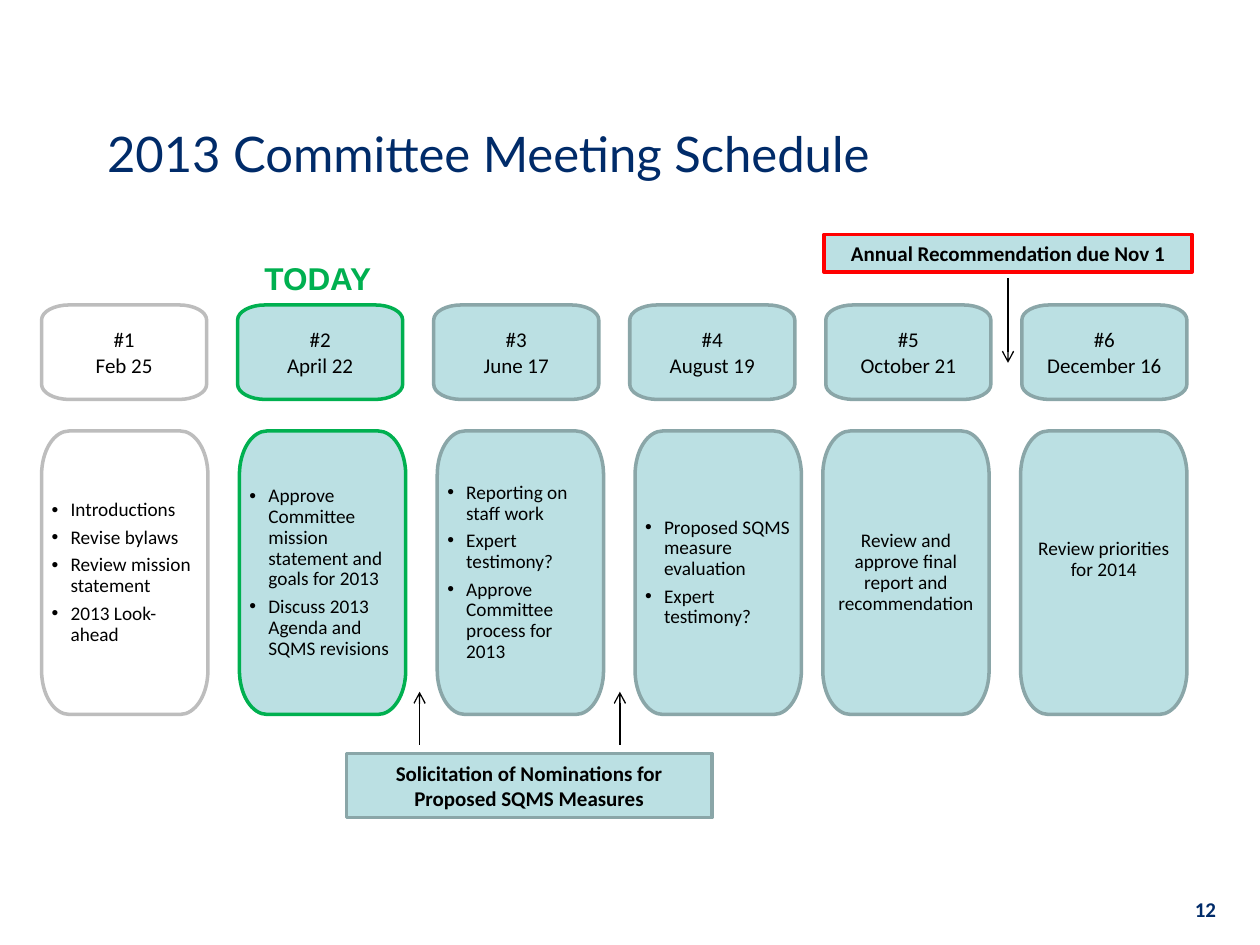
from math import cos, pi, sin, tan

from lxml.etree import SubElement
from pptx import Presentation
from pptx.dml.color import RGBColor
from pptx.enum.shapes import MSO_CONNECTOR, MSO_SHAPE
from pptx.enum.text import MSO_ANCHOR, MSO_AUTO_SIZE, PP_ALIGN
from pptx.oxml.ns import qn
from pptx.util import Inches, Pt

NAVY = RGBColor(0x00, 0x2B, 0x69)
BLACK = RGBColor(0x00, 0x00, 0x00)
WHITE = RGBColor(0xFF, 0xFF, 0xFF)
AQUA = RGBColor(0xBB, 0xE0, 0xE3)
TEAL = RGBColor(0x8A, 0xA6, 0xA8)
GREY = RGBColor(0xBD, 0xBD, 0xBD)
GREEN = RGBColor(0x00, 0xB0, 0x50)
RED = RGBColor(0xFF, 0x00, 0x00)

# Font formats
TITLE = {"name": "Lato", "size": Pt(28)}
DATE = {"name": "Calibri", "size": Pt(12)}
TASK = {"name": "Calibri", "size": Pt(11)}
NOTE = {"name": "Calibri", "size": Pt(12), "bold": True}
MARKER = {"name": "Arial", "size": Pt(18), "bold": True}

# Column grid, in inches
LEFT, RIGHT = 0.33, 9.42
DATE_WIDTH, TASK_WIDTH = 1.31, 1.32
DATE_PITCH = (RIGHT - LEFT - DATE_WIDTH) / 5
TASK_PITCH = 1.57
FINAL_SHIFT = 0.08  # the last two task columns sit closer in
CORNER_WIDTH = 0.22

# Number, date, tasks, fill, outline
MEETINGS = [
    ("#1", "Feb 25", ["Introductions", "Revise bylaws", "Review mission statement",
                      "2013 Look-ahead"], WHITE, GREY),
    ("#2", "April 22", ["Approve Committee mission statement and goals for 2013",
                        "Discuss 2013 Agenda and SQMS revisions"], AQUA, GREEN),
    ("#3", "June 17", ["Reporting on staff work", "Expert testimony?",
                       "Approve Committee process for 2013"], AQUA, TEAL),
    ("#4", "August 19", ["Proposed SQMS measure evaluation", "Expert testimony?"], AQUA, TEAL),
    ("#5", "October 21", ["Review and approve final report and recommendation"], AQUA, TEAL),
    ("#6", "December 16", ["Review priorities for 2014"], AQUA, TEAL),
]


def apply_format(font, font_format, color):
    for attribute, value in font_format.items():
        setattr(font, attribute, value)
    font.color.rgb = color


def write_lines(frame, lines, font_format, color, align=PP_ALIGN.CENTER):
    for index, line in enumerate(lines):
        paragraph = frame.paragraphs[0] if index == 0 else frame.add_paragraph()
        paragraph.alignment = align
        run = paragraph.add_run()
        run.text = line
        apply_format(run.font, font_format, color)


def paint(shape, fill, outline):
    shape.shadow.inherit = False
    shape.fill.solid()
    shape.fill.fore_color.rgb = fill
    shape.line.color.rgb = outline
    shape.line.width = Pt(2)


def trace_card(slide, box, corner_height):
    """Outline clockwise from the left side, two curves to each elliptical corner."""
    left, top, width, height = box
    right, bottom = left + width - CORNER_WIDTH, top + height - corner_height
    left, top = left + CORNER_WIDTH, top + corner_height
    centers = [(left, top), (right, top), (right, bottom), (left, bottom)]
    reach = 4 / 3 * tan(pi / 16)
    points, handles = [], []
    for quarter, (x, y) in enumerate(centers):
        for step in range(3):
            angle = pi + quarter * pi / 2 + step * pi / 4
            points.append((Inches(x + CORNER_WIDTH * cos(angle)),
                           Inches(y + corner_height * sin(angle))))
            handles.append((Inches(-reach * CORNER_WIDTH * sin(angle)),
                            Inches(reach * corner_height * cos(angle))))
    builder = slide.shapes.build_freeform(*points[0])
    builder.add_line_segments(points[1:], close=True)
    card = builder.convert_to_shape()

    # Bend the corner segments; every third one is a straight side
    segments = list(card._element.iter(qn("a:lnTo")))
    for index, segment in enumerate(segments[:len(points) - 1], start=1):
        if index % 3 == 0:
            continue
        end_point = segment[0]
        for corner, sign in ((index - 1, 1), (index, -1)):
            control = SubElement(segment, qn("a:pt"))
            control.set("x", str(points[corner][0] + sign * handles[corner][0] - card.left))
            control.set("y", str(points[corner][1] + sign * handles[corner][1] - card.top))
        segment.append(end_point)
        segment.tag = qn("a:cubicBezTo")
    return card


def add_card(slide, box, corner_height, fill, outline):
    card = trace_card(slide, box, corner_height)
    paint(card, fill, outline)
    frame = card.text_frame
    frame.word_wrap = True
    frame.vertical_anchor = MSO_ANCHOR.MIDDLE
    for side in ("left", "top", "right", "bottom"):
        setattr(frame, f"margin_{side}", Inches(0.08))
    return frame


def add_bullet(paragraph):
    properties = paragraph._p.get_or_add_pPr()
    properties.set("marL", str(Inches(0.15)))
    properties.set("indent", str(-Inches(0.15)))
    SubElement(properties, qn("a:buFont")).set("typeface", "Arial")
    SubElement(properties, qn("a:buChar")).set("char", "•")


def add_dates(slide, top, height):
    for column, (number, date, _, fill, outline) in enumerate(MEETINGS):
        box = (LEFT + column * DATE_PITCH, top, DATE_WIDTH, height)
        frame = add_card(slide, box, 0.12, fill, outline)
        write_lines(frame, [number, date], DATE, BLACK)


def add_tasks(slide, top, height):
    for column, (_, _, tasks, fill, outline) in enumerate(MEETINGS):
        shift = FINAL_SHIFT if column >= 4 else 0
        box = (LEFT + column * TASK_PITCH - shift, top, TASK_WIDTH, height)
        frame = add_card(slide, box, 0.35, fill, outline)
        bulleted = len(tasks) > 1
        write_lines(frame, tasks, TASK, BLACK, PP_ALIGN.LEFT if bulleted else PP_ALIGN.CENTER)
        for paragraph in frame.paragraphs:
            if bulleted:
                add_bullet(paragraph)
            paragraph.line_spacing = 0.9
            paragraph.space_after = Pt(3.85)
    # The last card's text sits slightly above the middle
    frame.margin_bottom = Inches(0.29)


def add_callout(slide, box, text, outline):
    callout = slide.shapes.add_shape(MSO_SHAPE.RECTANGLE, *map(Inches, box))
    paint(callout, AQUA, outline)
    callout.text_frame.word_wrap = True
    write_lines(callout.text_frame, [text], NOTE, BLACK)


def add_arrow(slide, x, start, end):
    arrow = slide.shapes.add_connector(
        MSO_CONNECTOR.STRAIGHT, Inches(x), Inches(start), Inches(x), Inches(end))
    arrow.line.color.rgb = BLACK
    arrow.line.width = Pt(0.75)
    SubElement(arrow.line._get_or_add_ln(), qn("a:tailEnd")).set("type", "arrow")
    SubElement(arrow._element.spPr, qn("a:effectLst"))


def add_label(slide, box, text, font_format, color, align, wrap):
    frame = slide.shapes.add_textbox(*map(Inches, box)).text_frame
    frame.word_wrap = wrap
    frame.auto_size = MSO_AUTO_SIZE.NONE if wrap else MSO_AUTO_SIZE.SHAPE_TO_FIT_TEXT
    frame.vertical_anchor = MSO_ANCHOR.MIDDLE if wrap else MSO_ANCHOR.TOP
    write_lines(frame, [text], font_format, color, align)


def add_title(slide, box, text):
    title = slide.shapes.title
    title.left, title.top, title.width, title.height = map(Inches, box)
    title.text_frame.vertical_anchor = MSO_ANCHOR.MIDDLE
    write_lines(title.text_frame, [text], TITLE, NAVY, PP_ALIGN.LEFT)


def main():
    deck = Presentation()
    deck.slide_width, deck.slide_height = Inches(10), Inches(7.5)
    slide = deck.slides.add_slide(deck.slide_layouts[5])

    add_title(slide, (0.75, 0.67, 8.5, 1.08), "2013 Committee Meeting Schedule")

    # Meeting columns
    add_tasks(slide, 3.42, 2.25)
    add_dates(slide, 2.42, 0.75)

    # Annual deadline
    add_callout(slide, (6.54, 1.86, 2.92, 0.3), "Annual Recommendation due Nov 1", RED)
    add_arrow(slide, 8, 2.21, 2.88)

    # Nominations between meetings
    add_callout(slide, (2.75, 5.98, 2.9, 0.51),
                "Solicitation of Nominations for Proposed SQMS Measures", TEAL)
    for gap in (3.33, 4.92):
        add_arrow(slide, gap, 5.91, 5.49)

    # Current meeting marker and page number
    add_label(slide, (2, 2.01, 1.05, 0.4), "TODAY", MARKER, GREEN, PP_ALIGN.LEFT, False)
    add_label(slide, (7.67, 7.08, 2.08, 0.27), "12", NOTE, NAVY, PP_ALIGN.RIGHT, True)

    deck.save("out.pptx")


if __name__ == "__main__":
    main()
